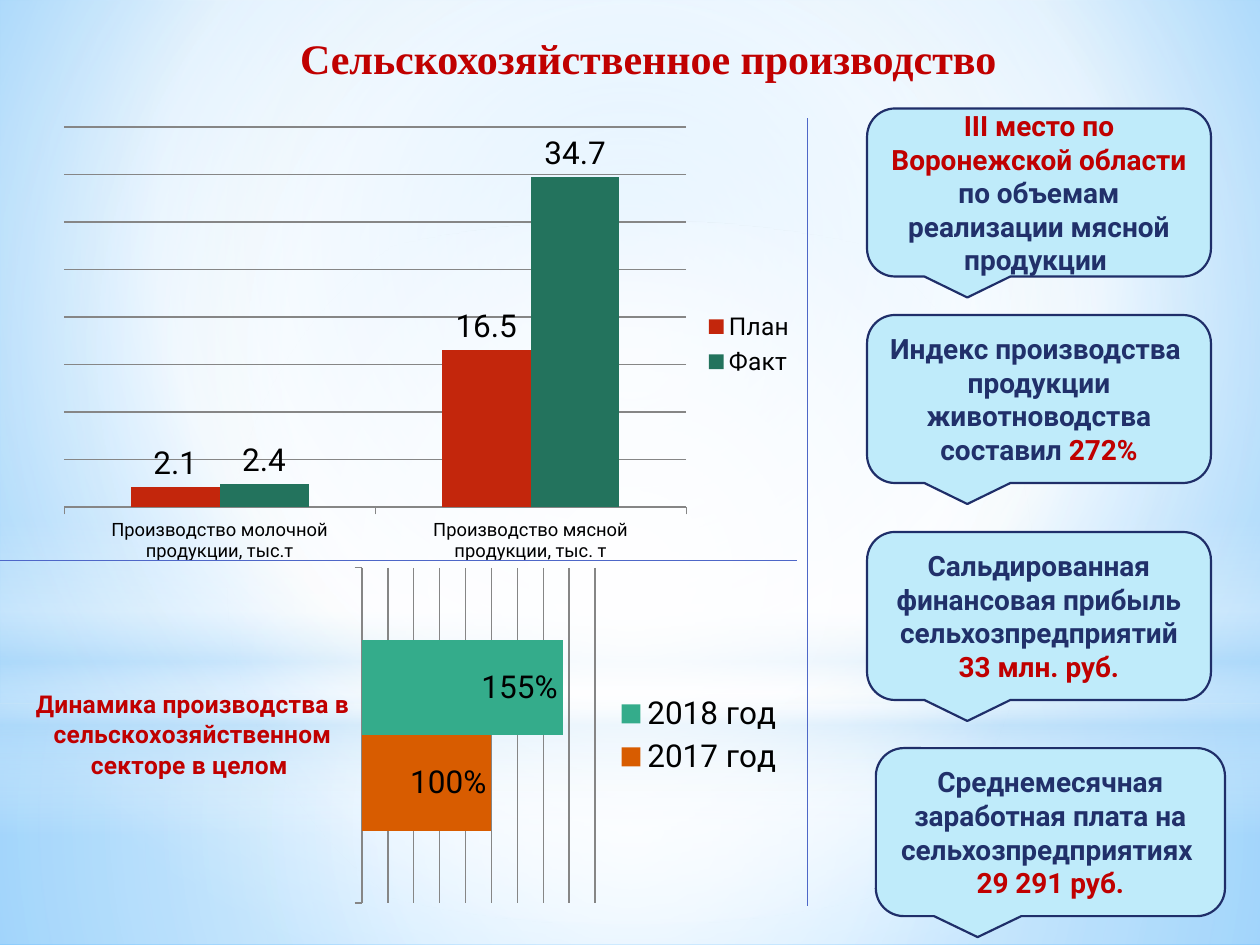
from lxml.etree import SubElement
from pptx import Presentation
from pptx.chart.data import CategoryChartData
from pptx.dml.color import RGBColor
from pptx.enum.chart import XL_CHART_TYPE as ChartType, XL_LABEL_POSITION as LabelPosition
from pptx.enum.chart import XL_LEGEND_POSITION as LegendPosition, XL_TICK_MARK as TickMark
from pptx.enum.shapes import MSO_CONNECTOR as Connector, MSO_SHAPE as Shape
from pptx.enum.text import MSO_ANCHOR as Anchor, MSO_AUTO_SIZE as AutoSize, PP_ALIGN as Align
from pptx.oxml import parse_xml
from pptx.oxml.ns import nsdecls, qn
from pptx.util import Pt

color = RGBColor.from_string
RED, NAVY, GRID = "C00000", "21306A", "868686"


def set_gradient(element, stops, center=None):
    """Rewrite the gradient in element: around center (l, t, r, b), or downwards without one.

    Stops are (position, colour, opacity), all numbers in percent.
    """
    gradient = element.find(".//" + qn("a:gradFill"))
    stop_xml = "".join(
        f'<a:gs pos="{position * 1000}"><a:srgbClr val="{value}">'
        f'<a:alpha val="{opacity * 1000}"/></a:srgbClr></a:gs>'
        for position, value, opacity in stops)
    if center:
        sides = " ".join(f'{side}="{value * 1000}"' for side, value in zip("ltrb", center))
        direction = f'<a:path path="circle"><a:fillToRect {sides}/></a:path>'
    else:
        direction = '<a:lin ang="5400000" scaled="0"/>'
    gradient.getparent().replace(gradient, parse_xml(
        f'<a:gradFill {nsdecls("a")} rotWithShape="1"><a:gsLst>{stop_xml}</a:gsLst>'
        f'{direction}</a:gradFill>'))


def add_bar_chart(kind, box, categories, series, number_format, axis_max, axis_step,
                  label_position, plot_box):
    """Add a bar chart; series are (name, values, colour), plot_box is in parts of the frame."""
    data = CategoryChartData(number_format=number_format)
    data.categories = categories
    for name, values, _ in series:
        data.add_series(name, values)
    chart = slide.shapes.add_chart(kind, *map(Pt, box), data).chart
    chart.has_title = False
    chart.font.name, chart.font.size = "Roboto", Pt(18)
    chart.font.color.rgb = color("000000")
    chart.has_legend = True
    chart.legend.position = LegendPosition.RIGHT
    chart.legend.include_in_layout = False

    value_axis = chart.value_axis
    value_axis.minimum_scale, value_axis.maximum_scale = 0, axis_max
    value_axis.major_unit = axis_step
    value_axis.visible = False
    value_axis.has_major_gridlines = True
    value_axis.major_gridlines.format.line.color.rgb = color(GRID)
    chart.category_axis.format.line.color.rgb = color(GRID)
    chart.category_axis.major_tick_mark = TickMark.OUTSIDE

    plot = chart.plots[0]
    plot.gap_width, plot.overlap, plot.vary_by_categories = 150, 0, False
    for bars, (_, _, fill) in zip(plot.series, series):
        bars.format.fill.solid()
        bars.format.fill.fore_color.rgb = color(fill)
        labels = bars.data_labels
        labels.show_value = True
        labels.number_format, labels.number_format_is_linked = number_format, False
        labels.position = label_position

    plot_area = chart.element.find(".//" + qn("c:plotArea"))
    for old_layout in plot_area.findall(qn("c:layout")):
        plot_area.remove(old_layout)
    sizes = "".join(f'<c:{tag} val="{value}"/>' for tag, value in zip("xywh", plot_box))
    plot_area.insert(0, parse_xml(
        f'<c:layout {nsdecls("c")}><c:manualLayout><c:layoutTarget val="inner"/>'
        f'<c:xMode val="edge"/><c:yMode val="edge"/>{sizes}</c:manualLayout></c:layout>'))
    return chart


presentation = Presentation()
presentation.slide_width, presentation.slide_height = Pt(720), Pt(540)
slide = presentation.slides.add_slide(presentation.slide_layouts[5])

# Background and its soft light layers
slide.background.fill.gradient()
set_gradient(slide.element, [(0, "9ED5FF", 100), (60, "FFFFFF", 100), (100, "5BB9FF", 100)],
             (20, 10, 20, 60))
MIDDLE = (50, 50, 50, 50)
layers = [
    (Shape.RECTANGLE, 402, 138,
     [(0, "FFFFFF", 91), (37, "FFFFFF", 76), (100, "B4DCFA", 79)], MIDDLE),
    (Shape.RECTANGLE, 0, 402,
     [(0, "FFFFFF", 89), (48, "FFFFFF", 62), (100, "B4DCFA", 79)], MIDDLE),
    (Shape.RECTANGLE, 297, 180,
     [(0, "FFFFFF", 0), (29, "FFFFFF", 30), (45, "B4DCFA", 40), (55, "FFFFFF", 26),
      (65, "B4DCFA", 60), (100, "FFFFFF", 0)], None),
    (Shape.OVAL, 126, 402, [(0, "FFFFFF", 100), (56, "FFFFFF", 0)], MIDDLE),
]
for kind, top, height, stops, center in layers:
    layer = slide.shapes.add_shape(kind, 0, Pt(top), Pt(720), Pt(height))
    layer.shadow.inherit = False
    layer.line.fill.background()
    layer.fill.gradient()
    set_gradient(layer.element, stops, center)

# Title, brought in front of the layers
title = slide.shapes.title
title.element.getparent().append(title.element)
title.left, title.top, title.width, title.height = Pt(162), Pt(15), Pt(417), Pt(36)
title.text = "Сельскохозяйственное производство"
title.text_frame.word_wrap = False
title.text_frame.auto_size = AutoSize.SHAPE_TO_FIT_TEXT
title.text_frame.vertical_anchor = Anchor.TOP
paragraph = title.text_frame.paragraphs[0]
paragraph.alignment = Align.CENTER
paragraph.font.name, paragraph.font.size, paragraph.font.bold = "Times New Roman", Pt(24), True
paragraph.font.color.rgb = color(RED)

# Charts
output_chart = add_bar_chart(
    ChartType.COLUMN_CLUSTERED, (28, 67.5, 433.5, 258.5),
    ["Производство молочной продукции, тыс.т", "Производство мясной продукции, тыс. т"],
    [("План", (2.1, 16.5), "C3260C"), ("Факт", (2.4, 34.7), "23735D")],
    "0.0", 40, 5, LabelPosition.OUTSIDE_END, (0.02, 0.02, 0.82, 0.84))
output_chart.category_axis.tick_labels.font.size = Pt(10.5)
output_chart.legend.font.size = Pt(14)

growth_chart = add_bar_chart(
    ChartType.BAR_CLUSTERED, (11.5, 320.5, 444, 199.5),
    ["Динамика производства в сельскохозяйственном секторе в целом "],
    [("2017 год", (1,), "D85C00"), ("2018 год", (1.55,), "34AC8B")],
    "0%", 1.8, 0.2, LabelPosition.INSIDE_END, (0.44, 0.02, 0.3, 0.96))
category_font = growth_chart.category_axis.tick_labels.font
category_font.size, category_font.bold = Pt(14), True
category_font.color.rgb = color(RED)

# Callouts
callouts = [
    (495.5, 62, 196.5, [("III место по Воронежской области ", RED),
                        ("по объемам реализации мясной продукции ", NAVY)]),
    (495.5, 180, 196.5, [("Индекс производства  продукции животноводства составил ", NAVY),
                         ("272%", RED)]),
    (495.5, 304, 196.5, [("Сальдированная финансовая прибыль сельхозпредприятий ", NAVY),
                         ("33 млн. руб.", RED)]),
    (500.5, 427.5, 199.5, [("Среднемесячная заработная плата на сельхозпредприятиях ", NAVY),
                           (" 29 291 руб.", RED)]),
]
for left, top, width, runs in callouts:
    callout = slide.shapes.add_shape(
        Shape.ROUNDED_RECTANGULAR_CALLOUT, Pt(left), Pt(top), Pt(width), Pt(96))
    callout.shadow.inherit = False
    callout.fill.solid()
    callout.fill.fore_color.rgb = color("BFEBFA")
    callout.line.color.rgb = color("1F2E69")
    callout.line.width = Pt(1.25)
    callout.text_frame.word_wrap = True
    callout.text_frame.vertical_anchor = Anchor.MIDDLE
    paragraph = callout.text_frame.paragraphs[0]
    paragraph.alignment = Align.CENTER
    paragraph.font.name, paragraph.font.size, paragraph.font.bold = "Roboto", Pt(16), True
    for text, text_color in runs:
        run = paragraph.add_run()
        run.text = text
        run.font.color.rgb = color(text_color)

# Dividers
for ends in [(0, 320.5, 455.5, 320.5), (461.5, 67.5, 461.5, 517.5)]:
    divider = slide.shapes.add_connector(Connector.STRAIGHT, *map(Pt, ends))
    divider.line.color.rgb = color("4E67C8")
    divider.line.width = Pt(0.75)
    SubElement(divider.element.spPr, qn("a:effectLst"))

presentation.save("out.pptx")
